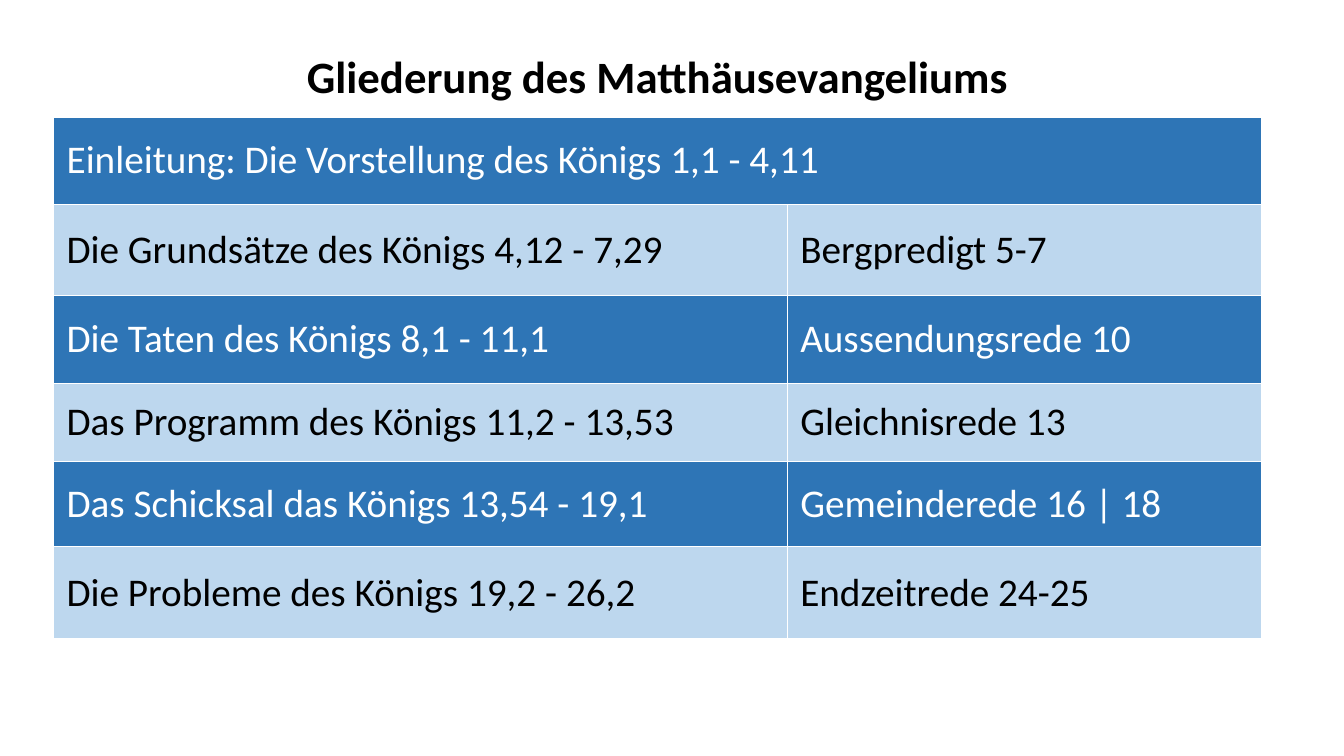
import pptx
import pptx.util
import pptx.dml.color
import pptx.enum.text
import pptx.oxml
import pptx.oxml.ns

Cm = pptx.util.Cm
Pt = pptx.util.Pt
RGBColor = pptx.dml.color.RGBColor
PP_ALIGN = pptx.enum.text.PP_ALIGN

BLACK = RGBColor(0x00, 0x00, 0x00)
WHITE = RGBColor(0xFF, 0xFF, 0xFF)
DARK_BLUE = RGBColor(0x2E, 0x75, 0xB6)
LIGHT_BLUE = RGBColor(0xBD, 0xD7, 0xEE)

TITLE = "Gliederung des Matthäusevangeliums"
SECTIONS = [
    ("Einleitung: Die Vorstellung des Königs 1,1 - 4,11",),
    ("Die Grundsätze des Königs 4,12 - 7,29", "Bergpredigt 5-7"),
    ("Die Taten des Königs 8,1 - 11,1", "Aussendungsrede 10"),
    ("Das Programm des Königs 11,2 - 13,53", "Gleichnisrede 13"),
    ("Das Schicksal das Königs 13,54 - 19,1", "Gemeinderede 16 | 18"),
    ("Die Probleme des Königs 19,2 - 26,2", "Endzeitrede 24-25"),
]
COL_WIDTHS = [18.49, 11.96]
ROW_HEIGHTS = [1.88, 2.24, 2.29, 2.21, 1.96, 2.16, 2.31, 2.16]


def write_text(tf, text, size=28, color=BLACK, bold=False, align=PP_ALIGN.LEFT):
    p = tf.paragraphs[0]
    p.alignment = align
    r = p.add_run()
    r.text = text
    r.font.name = "Calibri"
    r.font.size = Pt(size)
    r.font.bold = bold
    r.font.color.rgb = color


def add_borders(cell, color, bottom=1):
    tc_pr = cell._tc.get_or_add_tcPr()
    for side, width in (("L", 1), ("R", 1), ("T", 1), ("B", bottom)):
        tc_pr.append(pptx.oxml.parse_xml(
            f'<a:ln{side} {pptx.oxml.ns.nsdecls("a")} w="{Pt(width)}">'
            f'<a:solidFill><a:srgbClr val="{color}"/></a:solidFill></a:ln{side}>'))


def fill_row(table, row, texts, fill, bottom=1, **text_format):
    cells = [table.cell(row, col) for col in range(len(COL_WIDTHS))]
    for cell in cells:
        cell.margin_left = cell.margin_right = Cm(0.33)
        cell.margin_top = cell.margin_bottom = 0
        cell.vertical_anchor = pptx.enum.text.MSO_ANCHOR.MIDDLE
        add_borders(cell, WHITE, bottom)
        cell.fill.solid()
        cell.fill.fore_color.rgb = fill
    # A row with a single entry spans the full width
    if len(texts) < len(cells):
        cells[0].merge(cells[-1])
    for cell, text in zip(cells, texts):
        write_text(cell.text_frame, text, **text_format)


def add_outline_table(s):
    table = s.shapes.add_table(
        len(ROW_HEIGHTS), len(COL_WIDTHS), Cm(1.35), Cm(1.04),
        Cm(sum(COL_WIDTHS)), Cm(sum(ROW_HEIGHTS))).table
    for col, width in zip(table.columns, COL_WIDTHS):
        col.width = Cm(width)
    for row, height in zip(table.rows, ROW_HEIGHTS):
        row.height = Cm(height)

    # Title row
    fill_row(table, 0, [TITLE], WHITE, bottom=3, size=32, bold=True,
             align=PP_ALIGN.CENTER)

    # Sections in alternating colours
    bands = [(DARK_BLUE, WHITE), (LIGHT_BLUE, BLACK)]
    for i, texts in enumerate(SECTIONS):
        fill, color = bands[i % 2]
        fill_row(table, i + 1, texts, fill, color=color)

    # Empty closing row
    fill_row(table, len(ROW_HEIGHTS) - 1, [], WHITE)


def main():
    prs = pptx.Presentation()
    prs.slide_width = Cm(33.87)
    prs.slide_height = Cm(19.05)
    s = prs.slides.add_slide(prs.slide_layouts[6])
    add_outline_table(s)
    prs.save("out.pptx")


if __name__ == "__main__":
    main()
